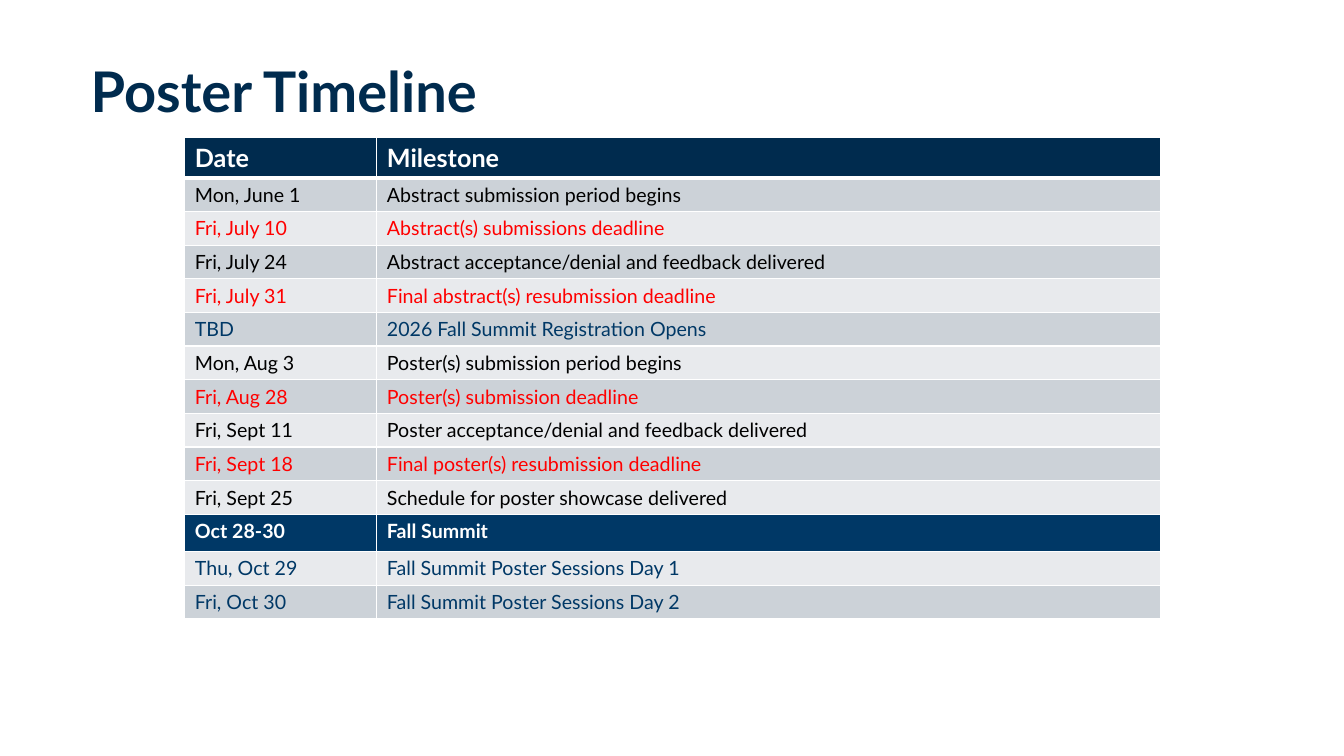
from lxml.etree import SubElement
from pptx import Presentation
from pptx.dml.color import RGBColor
from pptx.enum.text import MSO_ANCHOR, MSO_AUTO_SIZE, PP_ALIGN
from pptx.oxml.ns import qn
from pptx.util import Pt

WHITE = RGBColor(0xFF, 0xFF, 0xFF)
BLACK = RGBColor(0x00, 0x00, 0x00)
RED = RGBColor(0xFF, 0x00, 0x00)
NAVY = RGBColor(0x00, 0x2B, 0x4E)
BLUE = RGBColor(0x00, 0x38, 0x66)
DARK_BAND = RGBColor(0xCC, 0xD2, 0xD8)
LIGHT_BAND = RGBColor(0xE8, 0xEA, 0xED)

TITLE_ONLY = 5
COLUMN_WIDTHS = (137.2, 559.8)
HEADER = ("Date", "Milestone")
MILESTONES = (
    ("Mon, June 1", "Abstract submission period begins", BLACK),
    ("Fri, July 10", "Abstract(s) submissions deadline", RED),
    ("Fri, July 24", "Abstract acceptance/denial and feedback delivered", BLACK),
    ("Fri, July 31", "Final abstract(s) resubmission deadline", RED),
    ("TBD", "2026 Fall Summit Registration Opens", BLUE),
    ("Mon, Aug 3", "Poster(s) submission period begins", BLACK),
    ("Fri, Aug 28", "Poster(s) submission deadline", RED),
    ("Fri, Sept 11", "Poster acceptance/denial and feedback delivered", BLACK),
    ("Fri, Sept 18", "Final poster(s) resubmission deadline", RED),
    ("Fri, Sept 25", "Schedule for poster showcase delivered", BLACK),
    ("Oct 28-30", "Fall Summit", WHITE),
    ("Thu, Oct 29", "Fall Summit Poster Sessions Day 1", BLUE),
    ("Fri, Oct 30", "Fall Summit Poster Sessions Day 2", BLUE),
)


class TimelineSlide:
    font_name = "Lato"

    def __init__(self, deck):
        self.page = deck.slides.add_slide(deck.slide_layouts[TITLE_ONLY])

    def style(self, paragraph, size, color, bold):
        for span in paragraph.runs:
            span.font.name = self.font_name
            span.font.size = Pt(size)
            span.font.bold = bold
            span.font.color.rgb = color

    def title(self, text, left, top, width, height):
        box = self.page.shapes.title
        box.left, box.top, box.width, box.height = map(Pt, (left, top, width, height))
        frame = box.text_frame
        frame.text = text
        frame.word_wrap = True
        frame.auto_size = MSO_AUTO_SIZE.NONE
        frame.vertical_anchor = MSO_ANCHOR.TOP
        para = frame.paragraphs[0]
        para.alignment = PP_ALIGN.LEFT
        para.line_spacing = 0.9
        self.style(para, 40, NAVY, True)

    def borders(self, cell, top, bottom):
        """Draw white cell edges: 1 pt at the sides, the given widths above and below."""
        properties = cell._tc.get_or_add_tcPr()
        for side, width in (("L", 1), ("R", 1), ("T", top), ("B", bottom)):
            line = SubElement(properties, qn(f"a:ln{side}"), w=str(Pt(width)))
            fill = SubElement(line, qn("a:solidFill"))
            SubElement(fill, qn("a:srgbClr"), val=str(WHITE))

    def row(self, table, index, texts, height, size, color, bold, band):
        table.rows[index].height = Pt(height)
        for cell, text in zip(table.rows[index].cells, texts):
            cell.text = text
            self.style(cell.text_frame.paragraphs[0], size, color, bold)
            self.borders(cell, 3 if index == 1 else 1, 3 if index == 0 else 1)
            cell.fill.solid()
            cell.fill.fore_color.rgb = band

    def timeline(self, left, top):
        frame = self.page.shapes.add_table(
            len(MILESTONES) + 1, len(HEADER),
            Pt(left), Pt(top), Pt(sum(COLUMN_WIDTHS)), Pt(343.4))
        table = frame.table
        for column, width in zip(table.columns, COLUMN_WIDTHS):
            column.width = Pt(width)
        self.row(table, 0, HEADER, 28.8, 18, WHITE, True, NAVY)
        for index, (date, milestone, color) in enumerate(MILESTONES, 1):
            main_event = color == WHITE
            band = BLUE if main_event else DARK_BAND if index % 2 else LIGHT_BAND
            height = 26.6 if main_event else 24
            self.row(table, index, (date, milestone), height, 14, color, main_event, band)


def main():
    deck = Presentation()
    deck.slide_width, deck.slide_height = Pt(960), Pt(540)
    slide = TimelineSlide(deck)
    slide.title("Poster Timeline", 57.6, 42.5, 844.6, 54.7)
    slide.timeline(132, 98.2)
    deck.save("out.pptx")


if __name__ == "__main__":
    main()
